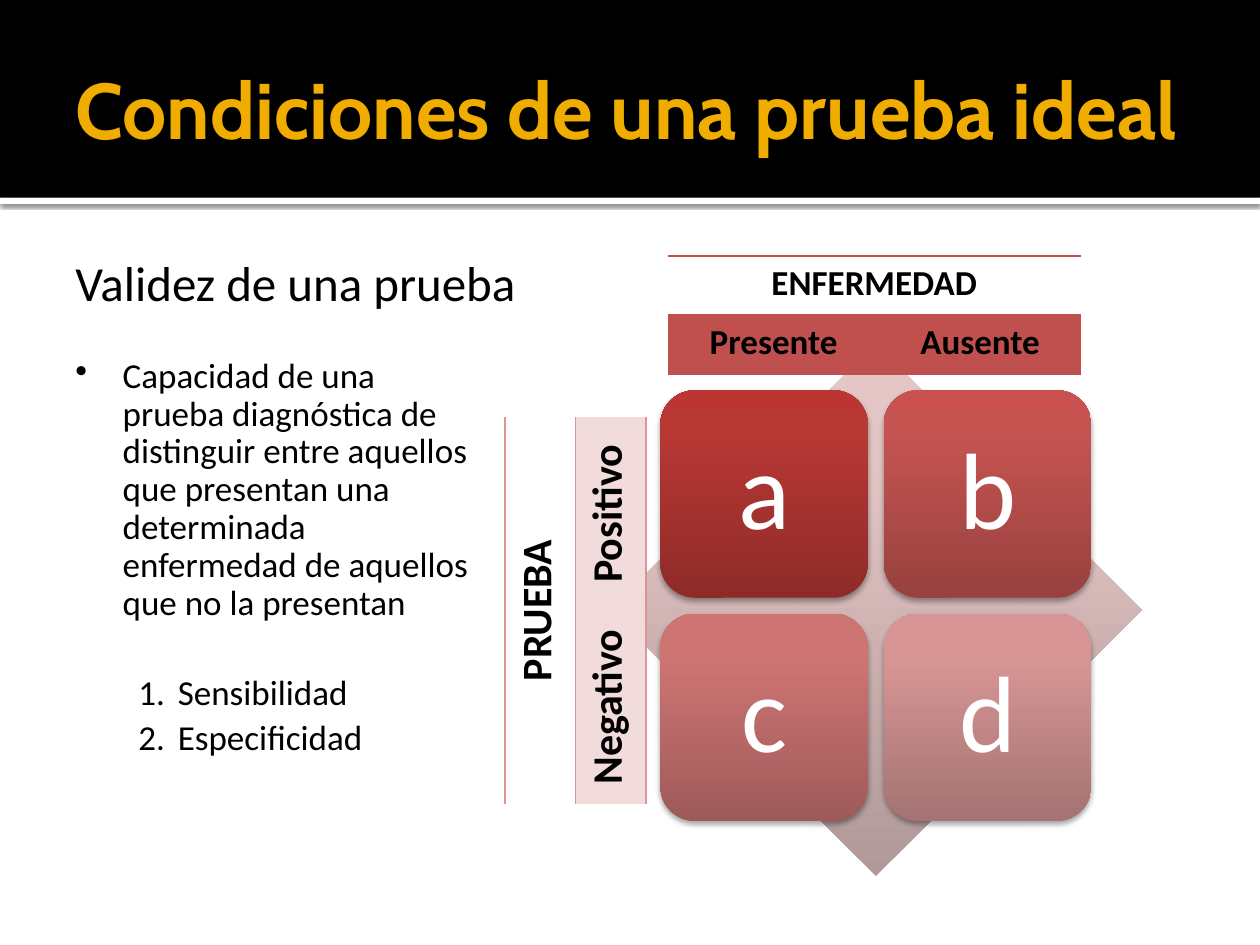
from lxml.etree import SubElement
from pptx import Presentation
from pptx.dml.color import RGBColor
from pptx.enum.shapes import MSO_SHAPE
from pptx.enum.text import MSO_ANCHOR, PP_ALIGN
from pptx.oxml.ns import qn
from pptx.util import Pt

BLACK, WHITE, RED, ROSE = "000000", "FFFFFF", "C0504D", "D99694"
PLAIN_TABLE = "{2D5ABB26-0587-4C30-8999-92F81FD0307C}"


def rgb(color):
    return RGBColor.from_string(color)


def add_color(parent, color, alpha=None):
    clr = SubElement(parent, qn("a:srgbClr"), val=color)
    if alpha is not None:
        SubElement(clr, qn("a:alpha"), val=str(alpha * 1000))


def add_run(p, text, size, color=BLACK, bold=False, font="Calibri"):
    r = p.add_run()
    r.text = text
    r.font.size = Pt(size)
    r.font.name = font
    r.font.bold = bold
    r.font.color.rgb = rgb(color)


def add_box(s, kind, box, color=None):
    sp = s.shapes.add_shape(kind, *map(Pt, box))
    sp.shadow.inherit = False
    sp.line.fill.background()
    if color:
        sp.fill.solid()
        sp.fill.fore_color.rgb = rgb(color)
    return sp


def add_shadow(sp, alpha, blur, dist):
    effects = sp._element.spPr.find(qn("a:effectLst"))
    shadow = SubElement(effects, qn("a:outerShdw"), blurRad=str(Pt(blur)),
                        dist=str(Pt(dist)), dir="5400000", rotWithShape="0")
    add_color(shadow, BLACK, alpha)


def set_gradient(sp, colors):
    """Run three colours from the bottom edge to the top."""
    sp.fill.gradient()
    sp.fill.gradient_angle = 90
    stops = sp._element.spPr.find(".//" + qn("a:gsLst"))
    for old in list(stops):
        stops.remove(old)
    for pos, color in zip((0, 80, 100), colors):
        add_color(SubElement(stops, qn("a:gs"), pos=str(pos * 1000)), color)


def add_text_frame(s, box, anchor=MSO_ANCHOR.TOP):
    tf = s.shapes.add_textbox(*map(Pt, box)).text_frame
    tf.word_wrap = True
    tf.vertical_anchor = anchor
    return tf


def set_list(p, indent, hanging, kind=None, **attrs):
    pPr = p._p.get_or_add_pPr()
    pPr.set("marL", str(Pt(indent)))
    pPr.set("indent", str(-Pt(hanging)))
    if kind:
        SubElement(pPr, qn("a:" + kind), **attrs)


def add_header(s, box):
    left, top, width, height = box
    stripe = add_box(s, MSO_SHAPE.RECTANGLE, (left, top + height, width, 3.6), WHITE)
    add_shadow(stripe, 60, 2.5, 0.8)
    add_box(s, MSO_SHAPE.RECTANGLE, box, BLACK)
    tf = add_text_frame(s, (left + 36, top + 12.2, width - 72, height - 14.4),
                        MSO_ANCHOR.MIDDLE)
    tf.margin_right = Pt(3.6)
    add_run(tf.paragraphs[0], "Condiciones de una prueba ideal", 45, "F0AD00", True, "Cabin")


def add_matrix(s, box):
    """Four rounded tiles over a diamond that fills the box."""
    left, top, width, height = box
    set_gradient(add_box(s, MSO_SHAPE.DIAMOND, box), ("B09998", "E5C6C6", "E6C7C6"))
    side, pitch = 118.6, 127.7
    x0 = left + (width - side - pitch) / 2
    y0 = top + 26.4
    tiles = (("a", ("8E2B28", "B83835", "BB3632")), ("b", ("98413F", "C55451", "C95250")),
             ("c", ("9E5A59", "CE7574", "D07472")), ("d", ("A57373", "D79695", "D99594")))
    for i, (letter, colors) in enumerate(tiles):
        row, col = divmod(i, 2)
        sp = add_box(s, MSO_SHAPE.ROUNDED_RECTANGLE,
                     (x0 + col * pitch, y0 + row * pitch, side, side))
        set_gradient(sp, colors)
        add_shadow(sp, 35, 3.1, 1.8)
        tf = sp.text_frame
        tf.vertical_anchor = MSO_ANCHOR.MIDDLE
        p = tf.paragraphs[0]
        p.alignment = PP_ALIGN.CENTER
        p.line_spacing = 0.9
        add_run(p, letter, 62, WHITE)


def add_label_table(s, box, widths, labels, merge_to, size, sides, line, fill, vert=None):
    """Labels for one axis: a merged heading, and two shaded values."""
    frame = s.shapes.add_table(2, 2, *map(Pt, box))
    table = frame.table
    table.first_row = table.horz_banding = False
    table._tbl.tblPr.find(qn("a:tableStyleId")).text = PLAIN_TABLE
    for col, width in zip(table.columns, widths):
        col.width = Pt(width)
    table.cell(0, 0).merge(table.cell(*merge_to))
    for cell in table.iter_cells():
        tcPr = cell._tc.get_or_add_tcPr()
        if vert:
            tcPr.set("vert", vert)
        for side in sides:
            ln = SubElement(tcPr, qn("a:ln" + side), w=str(Pt(1)))
            add_color(SubElement(ln, qn("a:solidFill")), line)
        cell.fill.background()
    for (row, col), text in labels.items():
        cell = table.cell(row, col)
        p = cell.text_frame.paragraphs[0]
        p.alignment = PP_ALIGN.CENTER
        add_run(p, text, size, bold=True)
        if not cell.is_merge_origin:
            color, alpha = fill
            cell.fill.solid()
            cell.fill.fore_color.rgb = rgb(color)
            clr = cell._tc.tcPr.find(".//" + qn("a:srgbClr"))
            SubElement(clr, qn("a:alpha"), val=str(alpha * 1000))


def add_explanation(s, box):
    left, top, width, height = box
    tf = add_text_frame(s, (left, top, 318, 50))
    set_list(tf.paragraphs[0], 27, 27)
    add_run(tf.paragraphs[0], "Validez de una prueba", 28)

    tf = add_text_frame(s, (left, top + 60, width, height - 60))
    p = tf.paragraphs[0]
    set_list(p, 27, 27, "buChar", char="•")
    p.line_spacing = 0.9
    add_run(p, "Capacidad de una prueba diagnóstica de distinguir entre aquellos que "
               "presentan una determinada enfermedad de aquellos que no la presentan", 20)
    for text, gap in (("Sensibilidad", 30), ("Especificidad", 4)):
        p = tf.add_paragraph()
        p.level = 1
        set_list(p, 58.5, 22.5, "buAutoNum", type="arabicPeriod")
        p.line_spacing = 0.9
        p.space_before = Pt(gap)
        add_run(p, text, 20)


def main():
    prs = Presentation()
    prs.slide_width, prs.slide_height = Pt(720), Pt(540)
    s = prs.slides.add_slide(prs.slide_layouts[6])
    add_header(s, (0, 0, 720, 113))
    add_matrix(s, (348.5, 196.6, 304, 304))
    add_label_table(s, (381.6, 146.2, 236, 67.6), (121, 115),
                    {(0, 0): "ENFERMEDAD", (1, 0): "Presente", (1, 1): "Ausente"},
                    (0, 1), 20, "TB", RED, (RED, 20))
    add_label_table(s, (288.7, 238.3, 80.6, 221), (40.3, 40.3),
                    {(0, 0): "PRUEBA", (0, 1): "Positivo", (1, 1): "Negativo"},
                    (1, 0), 24, "LR", ROSE, ("F2DCDB", 73), "vert270")
    add_explanation(s, (36, 141, 245.5, 371))
    prs.save("out.pptx")


if __name__ == "__main__":
    main()
